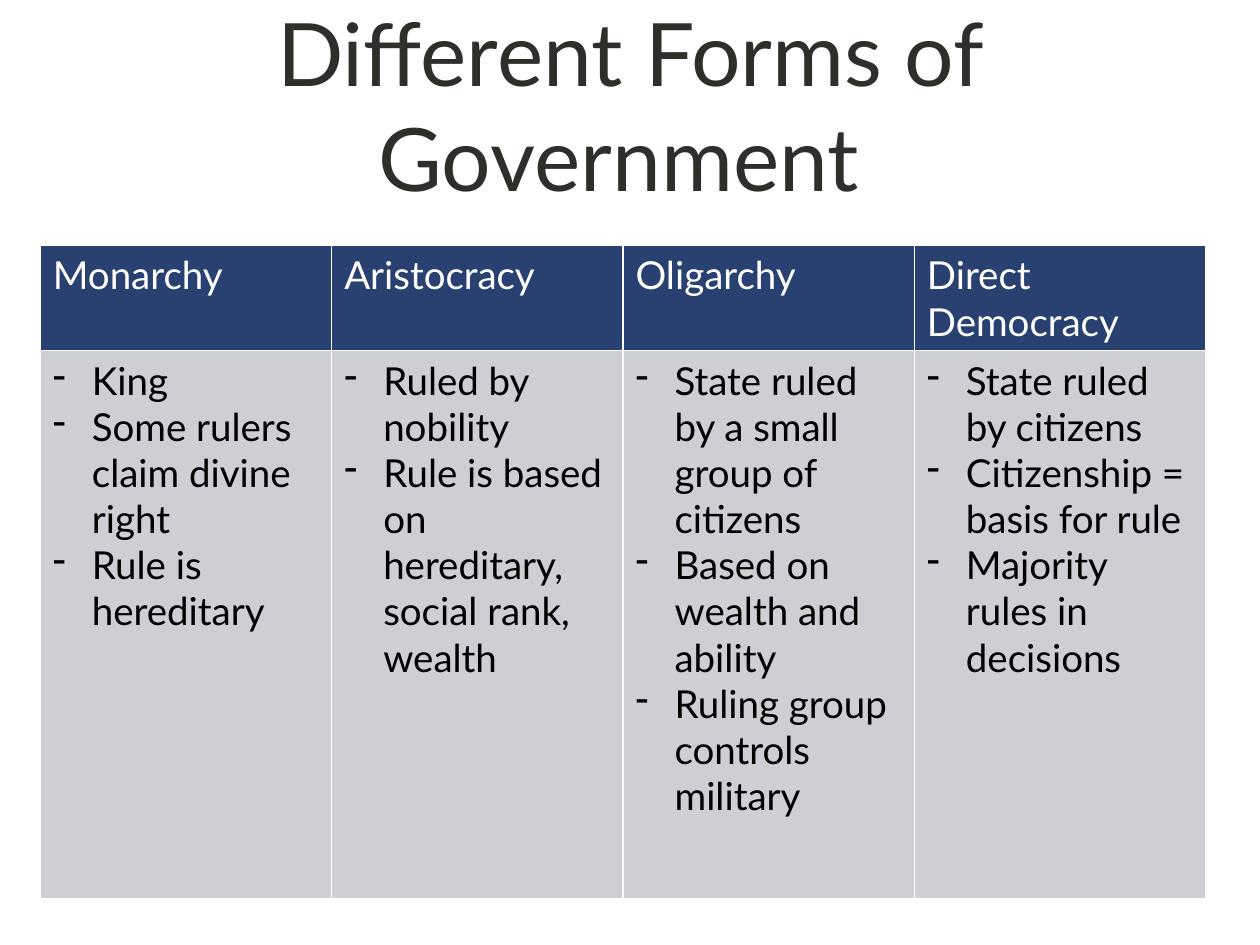
from dataclasses import dataclass

from lxml.etree import SubElement as Sub
from pptx import Presentation
from pptx.dml.color import RGBColor as RGB
from pptx.enum.text import MSO_ANCHOR as Anchor, MSO_AUTO_SIZE as Fit, PP_ALIGN as Align
from pptx.oxml.ns import qn
from pptx.util import Inches, Pt


@dataclass(frozen=True)
class Theme:
    face: str = "Lato"
    ink: str = "2D2F2B"
    head: str = "294171"
    body: str = "CDCFD5"
    light: str = "FFFFFF"
    dark: str = "000000"
    big: int = 50
    text: int = 22
    rule: int = 1
    indent: float = 0.31


THEME = Theme()
WIDE, HIGH = 10, 7.5
HEAD = 0.16  # header row's share of the table height
TITLE = "Different Forms of Government "
FORMS = {
    "Monarchy": ["King", "Some rulers claim divine right", "Rule is hereditary"],
    "Aristocracy": ["Ruled by nobility",
                    "Rule is based on hereditary, social rank, wealth"],
    "Oligarchy": ["State ruled by a small group of citizens",
                  "Based on wealth and ability",
                  "Ruling group controls military"],
    "Direct Democracy": ["State ruled by citizens", "Citizenship = basis for rule",
                         "Majority rules in decisions"],
}


def style(item, **values):
    for name, value in values.items():
        setattr(item, name, value)


def ink(font, size, color):
    style(font, name=THEME.face, size=Pt(size), bold=False)
    font.color.rgb = RGB.from_string(color)


def dash(para):
    """Give the paragraph a hanging dash bullet."""
    props = para._p.get_or_add_pPr()
    step = Inches(THEME.indent)
    props.set("marL", str(step))
    props.set("indent", str(-step))
    Sub(props, qn("a:buChar"), char="-")


def edge(cell):
    """Draw a thin rule on all four sides of the cell."""
    props = cell._tc.get_or_add_tcPr()
    for side in "LRTB":
        line = Sub(props, qn(f"a:ln{side}"), w=str(Pt(THEME.rule)))
        Sub(Sub(line, qn("a:solidFill")), qn("a:srgbClr"), val=THEME.light)


def fill_cell(cell, lines, back, color, listed=False):
    edge(cell)
    cell.fill.solid()
    cell.fill.fore_color.rgb = RGB.from_string(back)
    cell.text = "\n".join(lines)
    for para in cell.text_frame.paragraphs:
        if listed:
            dash(para)
        ink(para.font, THEME.text, color)


def add_title(slide, box):
    title = slide.shapes.title
    style(title, **dict(zip(("left", "top", "width", "height"), box)))
    frame = title.text_frame
    frame.text = TITLE
    style(frame, word_wrap=True, auto_size=Fit.NONE, vertical_anchor=Anchor.MIDDLE)
    para = frame.paragraphs[0]
    para.alignment = Align.CENTER
    ink(para.font, THEME.big, THEME.ink)


def add_forms(slide, box):
    table = slide.shapes.add_table(2, len(FORMS), *box).table
    top = int(box[3] * HEAD)
    table.rows[0].height, table.rows[1].height = top, box[3] - top
    for col, (name, facts) in enumerate(FORMS.items()):
        fill_cell(table.cell(0, col), [name], THEME.head, THEME.light)
        fill_cell(table.cell(1, col), facts, THEME.body, THEME.dark, listed=True)


def share(deck, left, top, width, height):
    """Turn shares of the slide into a box of lengths."""
    wide, high = deck.slide_width, deck.slide_height
    return [int(wide * left), int(high * top), int(wide * width), int(high * height)]


def main():
    deck = Presentation()
    style(deck, slide_width=Inches(WIDE), slide_height=Inches(HIGH))
    slide = deck.slides.add_slide(deck.slide_layouts[5])
    add_title(slide, share(deck, 0.075, 0.01, 0.85, 0.2))
    add_forms(slide, share(deck, 0.032, 0.26, 0.925, 0.69))
    deck.save("out.pptx")


if __name__ == "__main__":
    main()
